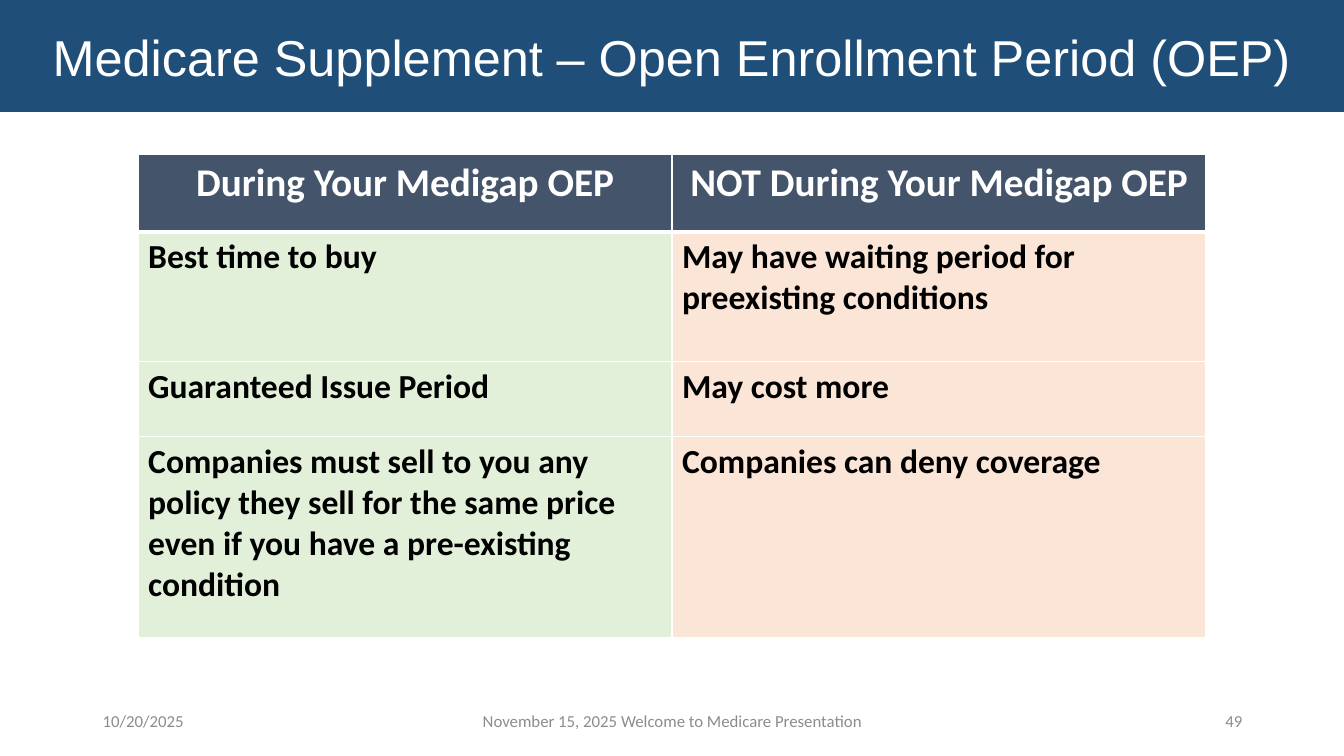
from dataclasses import dataclass

from lxml import etree
from pptx import Presentation
from pptx.dml.color import RGBColor
from pptx.enum.text import MSO_ANCHOR, MSO_AUTO_SIZE, PP_ALIGN
from pptx.oxml.ns import qn
from pptx.util import Inches, Pt

LEFT, CENTER, RIGHT = PP_ALIGN.LEFT, PP_ALIGN.CENTER, PP_ALIGN.RIGHT
MIDDLE = MSO_ANCHOR.MIDDLE
NO_AUTOFIT = MSO_AUTO_SIZE.NONE

# Content
TITLE = "Medicare Supplement – Open Enrollment Period (OEP)"
ROWS = [
    ("During Your Medigap OEP", "NOT During Your Medigap OEP"),
    ("Best time to buy", "May have waiting period for preexisting conditions"),
    ("Guaranteed Issue Period", "May cost more"),
    ("Companies must sell to you any policy they sell for the same price "
     "even if you have a pre-existing condition", "Companies can deny coverage"),
]
ROW_HEIGHTS = [0.77, 1.29, 0.74, 2]
FOOTERS = [  # text, left, width, alignment
    ("10/20/2025", 0.92, 3, LEFT),
    ("November 15, 2025 Welcome to Medicare Presentation", 4.42, 4.5, CENTER),
    ("49", 9.42, 3, RIGHT),
]


@dataclass(frozen=True)
class Theme:
    banner: str = "1F4E79"
    header: str = "44546A"
    columns: tuple = ("E2F0D9", "FBE5D6")
    white: str = "FFFFFF"
    text: str = "000000"
    muted: str = "8C8C8C"
    title_font: str = "Arial"
    body_font: str = "Calibri"
    title_size: int = 36
    header_size: int = 28
    body_size: int = 24
    footer_size: int = 12


THEME = Theme()
SLIDE_WIDTH, SLIDE_HEIGHT = 13.33, 7.5
TABLE_TOP, TABLE_WIDTH = 1.53, 10.59


def write(frame, text, size, color, font=THEME.body_font, bold=False, align=LEFT):
    frame.word_wrap = True
    para = frame.paragraphs[0]
    para.alignment = align
    span = para.add_run()
    span.text = text
    span.font.name = font
    span.font.size = Pt(size)
    span.font.bold = bold
    span.font.color.rgb = RGBColor.from_string(color)


def paint(target, color):
    target.fill.solid()
    target.fill.fore_color.rgb = RGBColor.from_string(color)


def add_borders(cell, bottom, top):
    properties = cell._tc.get_or_add_tcPr()
    widths = {"a:lnL": 1, "a:lnR": 1, "a:lnT": top, "a:lnB": bottom}
    for index, (side, width) in enumerate(widths.items()):
        line = etree.Element(qn(side), w=str(Pt(width)))
        fill = etree.SubElement(line, qn("a:solidFill"))
        etree.SubElement(fill, qn("a:srgbClr"), val=THEME.white)
        properties.insert(index, line)


def add_title(page):
    banner = page.shapes.title
    banner.left, banner.top = Inches(0), Inches(0)
    banner.width, banner.height = Inches(SLIDE_WIDTH), Inches(1.11)
    paint(banner, THEME.banner)
    banner.text_frame.auto_size = NO_AUTOFIT
    banner.text_frame.vertical_anchor = MIDDLE
    write(banner.text_frame, TITLE, THEME.title_size, THEME.white,
          font=THEME.title_font, align=CENTER)


def add_comparison(page):
    left = (SLIDE_WIDTH - TABLE_WIDTH) / 2
    table = page.shapes.add_table(
        len(ROWS), len(ROWS[0]), Inches(left), Inches(TABLE_TOP),
        Inches(TABLE_WIDTH), Inches(sum(ROW_HEIGHTS))).table
    for r, (texts, height) in enumerate(zip(ROWS, ROW_HEIGHTS)):
        table.rows[r].height = Inches(height)
        for c, text in enumerate(texts):
            cell = table.cell(r, c)
            if r == 0:
                paint(cell, THEME.header)
                write(cell.text_frame, text, THEME.header_size, THEME.white,
                      bold=True, align=CENTER)
            else:
                paint(cell, THEME.columns[c])
                write(cell.text_frame, text, THEME.body_size, THEME.text, bold=True)
            add_borders(cell, bottom=3 if r == 0 else 1, top=3 if r == 1 else 1)


def add_footers(page):
    for text, left, width, align in FOOTERS:
        box = page.shapes.add_textbox(
            Inches(left), Inches(6.95), Inches(width), Inches(0.4))
        box.text_frame.vertical_anchor = MIDDLE
        write(box.text_frame, text, THEME.footer_size, THEME.muted, align=align)


def main():
    deck = Presentation()
    deck.slide_width, deck.slide_height = Inches(SLIDE_WIDTH), Inches(SLIDE_HEIGHT)
    page = deck.slides.add_slide(deck.slide_layouts.get_by_name("Title Only"))
    add_title(page)
    add_comparison(page)
    add_footers(page)
    deck.save("out.pptx")


if __name__ == "__main__":
    main()
